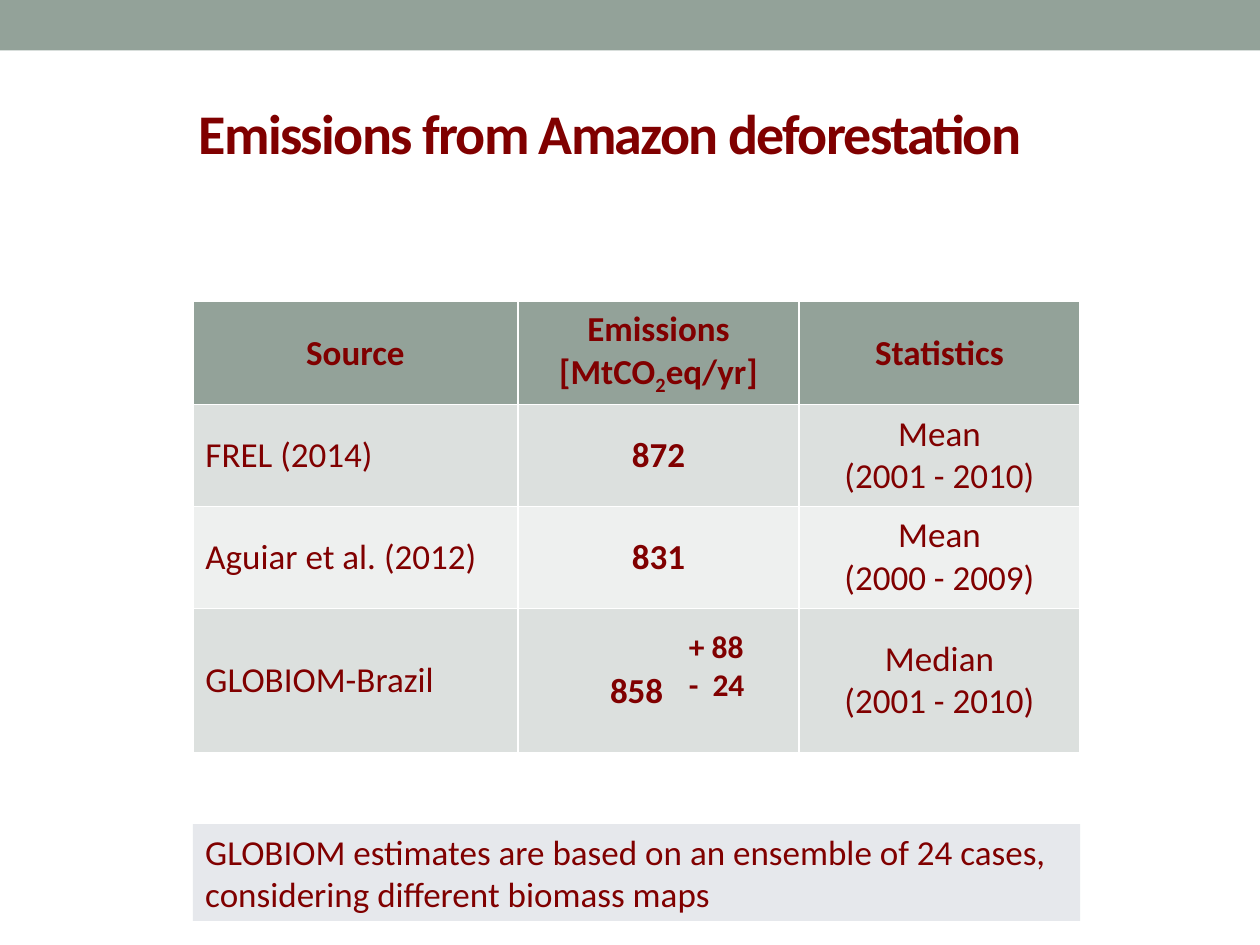
"""Build the slide comparing estimates of emissions from Amazon deforestation."""
from lxml import etree
from pptx import Presentation
from pptx.dml.color import RGBColor
from pptx.enum.shapes import MSO_SHAPE
from pptx.enum.text import MSO_ANCHOR, PP_ALIGN
from pptx.oxml.ns import qn
from pptx.util import Pt

RECT = MSO_SHAPE.RECTANGLE
MIDDLE, TOP = MSO_ANCHOR.MIDDLE, MSO_ANCHOR.TOP
LEFT, CENTER = PP_ALIGN.LEFT, PP_ALIGN.CENTER
MAROON = RGBColor(0x80, 0x00, 0x00)
SAGE = RGBColor(0x93, 0xA2, 0x99)
BAND_DARK = RGBColor(0xDC, 0xE0, 0xDE)
BAND_LIGHT = RGBColor(0xEE, 0xF0, 0xEF)
NOTE_FILL = RGBColor(0xE6, 0xE8, 0xEC)
TABLE_LEFT, TABLE_WIDTH = 110.2, 507


def style_text(tf, size, bold=False, align=LEFT):
    for p in tf.paragraphs:
        p.alignment = align
        for r in p.runs:
            r.font.name = "Calibri"
            r.font.size = Pt(size)
            r.font.bold = bold
            r.font.color.rgb = MAROON


def add_panel(left, top, width, height, color):
    panel = s.shapes.add_shape(RECT, Pt(left), Pt(top), Pt(width), Pt(height))
    panel.shadow.inherit = False
    panel.fill.solid()
    panel.fill.fore_color.rgb = color
    panel.line.fill.background()
    return panel


prs = Presentation()
prs.slide_width, prs.slide_height = Pt(720), Pt(540)
s = prs.slides.add_slide(prs.slide_layouts[5])

add_panel(0, 0, 720, 28.8, SAGE)

title = s.shapes.title
title.left, title.top, title.width, title.height = Pt(24.5), Pt(36.7), Pt(648), Pt(77.8)
title.text_frame.text = "Emissions from Amazon deforestation"
title.text_frame.vertical_anchor = MIDDLE
style_text(title.text_frame, 32, True, CENTER)
title.text_frame.paragraphs[0].runs[0].font._element.set("spc", "-100")

ROWS = [
    ("Source", "Emissions [MtCO2eq/yr]", "Statistics"),
    ("FREL (2014)", "872", "Mean\n(2001 - 2010)"),
    ("Aguiar et al. (2012)", "831", "Mean\n(2000 - 2009)"),
    ("GLOBIOM-Brazil", "858", "Median\n(2001 - 2010)"),
]
ROW_FILLS = [SAGE, BAND_DARK, BAND_LIGHT, BAND_DARK]
ROW_HEIGHTS = [58.2, 58.2, 58.2, 82.6]
COLUMN_WIDTHS = [185.8, 160.6, 160.6]

table = s.shapes.add_table(len(ROWS), len(COLUMN_WIDTHS), Pt(TABLE_LEFT), Pt(172.3),
                           Pt(TABLE_WIDTH), Pt(sum(ROW_HEIGHTS))).table
for column, width in zip(table.columns, COLUMN_WIDTHS):
    column.width = Pt(width)
for i, (row, texts) in enumerate(zip(table.rows, ROWS)):
    row.height = Pt(ROW_HEIGHTS[i])
    for j, (cell, text) in enumerate(zip(row.cells, texts)):
        cell.fill.solid()
        cell.fill.fore_color.rgb = ROW_FILLS[i]
        cell.vertical_anchor = MIDDLE
        cell.text_frame.text = text
        style_text(cell.text_frame, 20, i == 0 or j == 1, LEFT if i and j == 0 else CENTER)

unit_cell = table.cell(0, 1)
p = unit_cell.text_frame.paragraphs[0]
p.text = ""
for part in ("Emissions [MtCO", "2", "eq/yr]"):
    r = p.add_run()
    r.text = part
    if part == "2":
        r.font._element.set("baseline", "-25000")
style_text(unit_cell.text_frame, 20, True, CENTER)

model_cell = table.cell(3, 1)
model_cell.margin_left = Pt(52.6)
p = model_cell.text_frame.paragraphs[0]
p.alignment = LEFT
p.line_spacing = 1.5

spread = s.shapes.add_textbox(Pt(386.6), Pt(355), Pt(46.8), Pt(51))
tf = spread.text_frame
tf.word_wrap = False
tf.text = "+ 88\n-\t24"
tab_list = etree.SubElement(tf.paragraphs[1]._p.get_or_add_pPr(), qn("a:tabLst"))
etree.SubElement(tab_list, qn("a:tab"), pos=str(Pt(13.5)), algn="l")
style_text(tf, 18, True)

note = add_panel(TABLE_LEFT, 470.9, TABLE_WIDTH, 55.4, NOTE_FILL)
tf = note.text_frame
tf.word_wrap = True
tf.vertical_anchor = TOP
tf.text = "GLOBIOM estimates are based on an ensemble of 24 cases, considering different biomass maps"
style_text(tf, 20)

prs.save("out.pptx")
